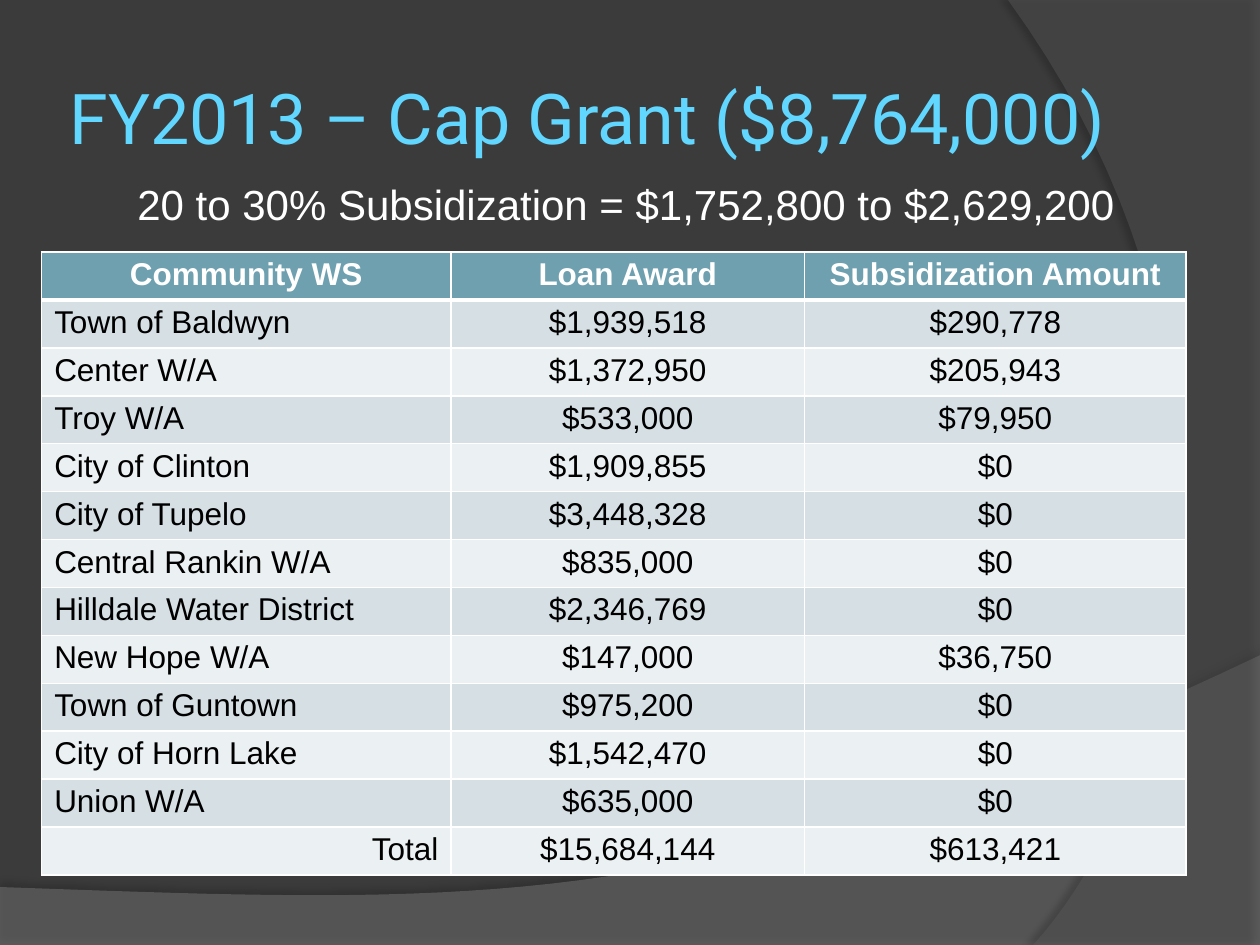
from dataclasses import dataclass

import lxml.etree
import pptx
import pptx.dml.color
import pptx.enum.text
import pptx.oxml.ns
import pptx.util

Cm, Pt = pptx.util.Cm, pptx.util.Pt
ALIGN = pptx.enum.text.PP_ALIGN
ANCHOR = pptx.enum.text.MSO_ANCHOR
qn = pptx.oxml.ns.qn


@dataclass(frozen=True)
class Theme:
    background: str = "3B3B3B"
    floor: str = "7F7F7F"
    side: str = "5E5E5E"
    title: str = "61D6FF"
    light: str = "FFFFFF"
    dark: str = "000000"
    header: str = "6EA0B0"
    bands: tuple = ("D5DFE4", "EBF0F2")
    title_font: str = "Roboto"
    body_font: str = "Arial"
    title_size: int = 40
    subtitle_size: int = 24
    table_size: int = 18


THEME = Theme()

HEADINGS = ("Community WS", "Loan Award", "Subsidization Amount")
AWARDS = (
    ("Town of Baldwyn", "$1,939,518", "$290,778"),
    ("Center W/A", "$1,372,950", "$205,943"),
    ("Troy W/A", "$533,000", "$79,950"),
    ("City of Clinton", "$1,909,855", "$0"),
    ("City of Tupelo", "$3,448,328", "$0"),
    ("Central Rankin W/A", "$835,000", "$0"),
    ("Hilldale Water District", "$2,346,769", "$0"),
    ("New Hope W/A", "$147,000", "$36,750"),
    ("Town of Guntown", "$975,200", "$0"),
    ("City of Horn Lake", "$1,542,470", "$0"),
    ("Union W/A", "$635,000", "$0"),
    ("Total", "$15,684,144", "$613,421"),
)


def rgb(color):
    return pptx.dml.color.RGBColor.from_string(color)


def add_node(parent, tag, **attributes):
    node = lxml.etree.SubElement(parent, qn(tag))
    for name, value in attributes.items():
        node.set(name, str(value))
    return node


def write(frame, text, *, size, color, font=THEME.body_font, bold=False,
          align=ALIGN.LEFT):
    para = frame.paragraphs[0]
    para.alignment = align
    span = para.add_run()
    span.text = text
    span.font.name, span.font.size, span.font.bold = font, Pt(size), bold
    span.font.color.rgb = rgb(color)


def place(shape, box):
    shape.left, shape.top, shape.width, shape.height = map(Cm, box)


def curve(start, first, second, end, steps=40):
    """Points after start on a cubic curve."""
    points = []
    for step in range(1, steps + 1):
        t = step / steps
        weights = ((1 - t) ** 3, 3 * t * (1 - t) ** 2, 3 * t * t * (1 - t), t ** 3)
        points.append(tuple(
            sum(weight * value for weight, value in zip(weights, axis))
            for axis in zip(start, first, second, end)))
    return points


def add_sweep(page, box, corners, bend, *, color, opacity, shadow):
    """Translucent area; corners and bend are fractions of the box."""
    left, top, width, height = box
    points = [(Cm(left + x * width), Cm(top + y * height))
              for x, y in corners + curve(corners[-1], *bend)]
    builder = page.shapes.build_freeform(*points[0])
    builder.add_line_segments(points[1:], close=True)
    sweep = builder.convert_to_shape()
    sweep.fill.solid()
    sweep.fill.fore_color.rgb = rgb(color)
    sweep.line.fill.background()
    sweep.shadow.inherit = False

    properties = sweep._element.spPr
    fill_color = properties.find(qn("a:solidFill"))[0]
    add_node(fill_color, "a:alpha", val=opacity * 1000)
    distance, angle, strength = shadow
    outer = add_node(properties.find(qn("a:effectLst")), "a:outerShdw",
                     blurRad=Pt(4), dist=Pt(distance), dir=angle * 60000,
                     algn="ctr", rotWithShape=0)
    shade = add_node(outer, "a:srgbClr", val=THEME.dark)
    add_node(shade, "a:alpha", val=strength * 1000)


def add_backdrop(page, box):
    left, top, width, height = box
    page.background.fill.solid()
    page.background.fill.fore_color.rgb = rgb(THEME.background)
    # Floor along the bottom edge
    floor_height = 5.84
    add_sweep(page, (left, top + height - floor_height, width, floor_height),
              [(0, 0.8), (0, 1), (1, 1), (1, 0)],
              [(0.56, 0.91), (0.39, 0.86), (0, 0.8)],
              color=THEME.floor, opacity=45, shadow=(3.5, 270, 35))
    # Panel along the right edge
    side_width = width / 5
    add_sweep(page, (left + width - side_width, top, side_width, height),
              [(1, 0), (1, 1), (0.1, 1)],
              [(0.68, 0.83), (1.09, 0.4), (0, 0)],
              color=THEME.side, opacity=40, shadow=(4, 180, 45))


def add_heading(page, box):
    left, top, width, height = box
    # Title, brought in front of the backdrop
    title = page.shapes.title
    page.shapes._spTree.append(title._element)
    place(title, (left, top, width, 3.18))
    frame = title.text_frame
    frame.word_wrap = True
    frame.vertical_anchor = ANCHOR.MIDDLE
    frame.margin_left = frame.margin_right = Cm(0.13)
    frame.margin_top = frame.margin_bottom = Cm(0.13)
    write(frame, "FY2013 – Cap Grant ($8,764,000)", size=THEME.title_size,
          color=THEME.title, font=THEME.title_font)
    # Indented subtitle
    subtitle_top = 2.72
    subtitle = page.shapes.add_textbox(
        *map(Cm, (left, top + subtitle_top, width, height - subtitle_top)))
    subtitle.text_frame.word_wrap = True
    subtitle.text_frame.margin_left = Cm(1.5)
    write(subtitle.text_frame,
          "20 to 30% Subsidization = $1,752,800 to $2,629,200",
          size=THEME.subtitle_size, color=THEME.light)


def format_cell(cell, text, *, fill, color, align, bold=False, bottom=1):
    properties = cell._tc.get_or_add_tcPr()
    for side, width in (("L", 1), ("R", 1), ("T", 1), ("B", bottom)):
        line = add_node(properties, f"a:ln{side}", w=Pt(width))
        add_node(add_node(line, "a:solidFill"), "a:srgbClr", val=THEME.light)
    cell.fill.solid()
    cell.fill.fore_color.rgb = rgb(fill)
    cell.margin_top = cell.margin_bottom = Cm(0.1)
    write(cell.text_frame, text, size=THEME.table_size, color=color,
          bold=bold, align=align)


def add_awards(page, box):
    table = page.shapes.add_table(
        len(AWARDS) + 1, len(HEADINGS), *map(Cm, box)).table
    for column, width in zip(table.columns, (8.25, 7.13, 7.69)):
        column.width = Cm(width)
    for row in table.rows:
        row.height = Cm(box[3] / len(table.rows))
    # Header row
    for cell, text in zip(table.rows[0].cells, HEADINGS):
        format_cell(cell, text, fill=THEME.header, color=THEME.light,
                    align=ALIGN.CENTER, bold=True, bottom=3)
    # Banded rows, the last one being the total
    for index, values in enumerate(AWARDS):
        name_align = ALIGN.RIGHT if values[0] == "Total" else ALIGN.LEFT
        aligns = (name_align, ALIGN.CENTER, ALIGN.CENTER)
        cells = table.rows[index + 1].cells
        for cell, text, align in zip(cells, values, aligns):
            format_cell(cell, text, fill=THEME.bands[index % 2],
                        color=THEME.dark, align=align)


def main():
    deck = pptx.Presentation()
    deck.slide_width, deck.slide_height = Cm(25.4), Cm(19.05)
    page = deck.slides.add_slide(deck.slide_layouts[5])
    add_backdrop(page, (0, 0, 25.4, 19.05))
    add_heading(page, (1.27, 0.76, 23.06, 3.95))
    add_awards(page, (0.84, 5.08, 23.07, 12.57))
    deck.save("out.pptx")


if __name__ == "__main__":
    main()
